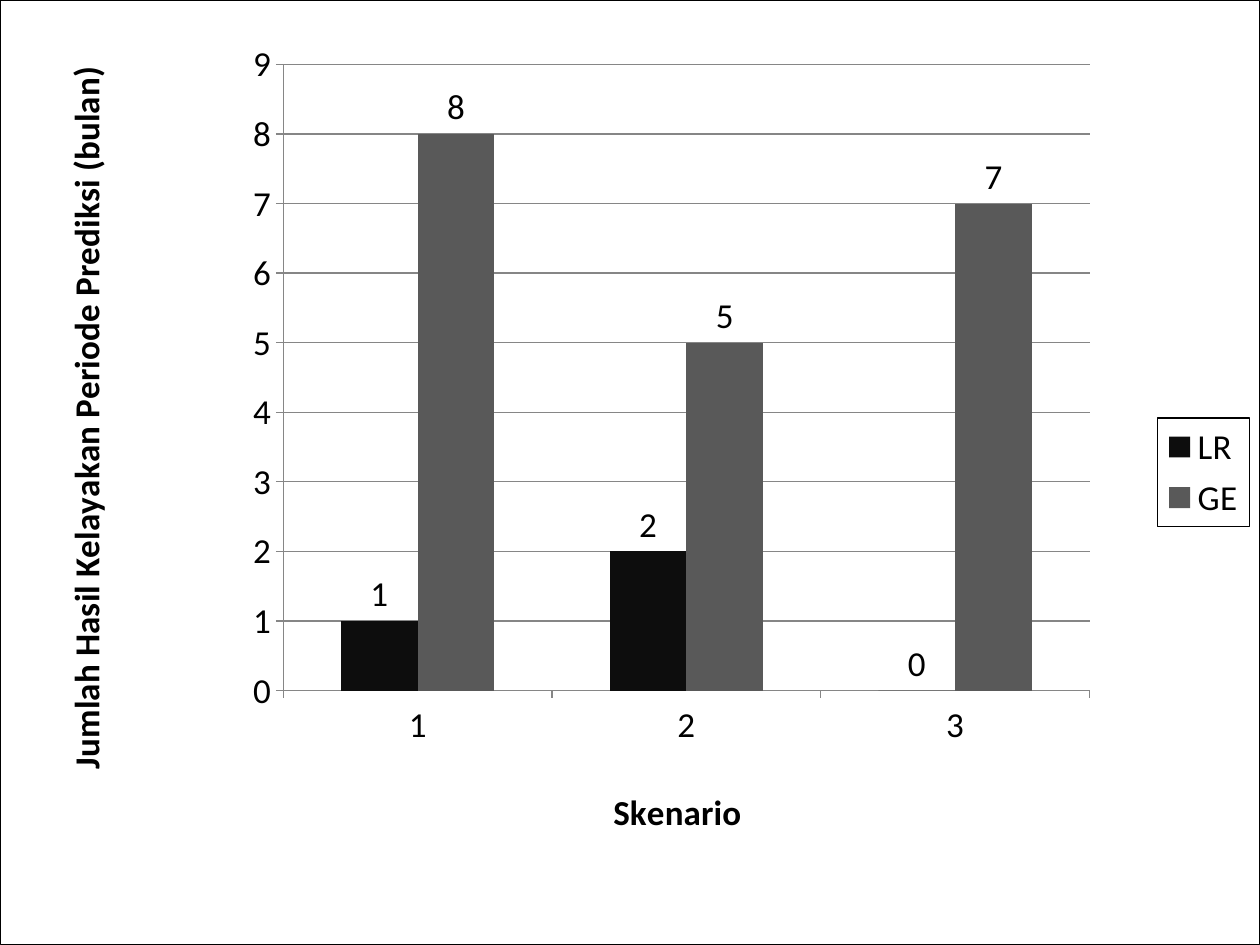
"""Build a slide with a clustered column chart of feasible prediction periods."""
import lxml.etree
import pptx
import pptx.chart.data
import pptx.dml.color
import pptx.enum.chart
import pptx.oxml
import pptx.oxml.ns
import pptx.util

CATEGORIES = ["1", "2", "3"]
SERIES = [("LR", (1, 2, 0), "0D0D0D"), ("GE", (8, 5, 7), "595959")]
AXIS_TITLES = {
    "category": "Skenario",
    "value": "Jumlah Hasil Kelayakan Periode Prediksi (bulan)",
}
THEME = {"font": "Calibri", "size": 20, "text": "000000", "border": "000000",
         "axis": "868686", "background": "FFFFFF"}
SLIDE_WIDTH, SLIDE_HEIGHT = 1260, 945
EMU_PER_PX = pptx.util.Inches(1) // 126
PLOT_BOX = (283, 64, 807, 627)
LEGEND_BOX = (1158, 418, 92, 109)
TITLE_POSITIONS = {"category": (607, 781), "value": (54, 60)}


def color(name):
    return pptx.dml.color.RGBColor.from_string(THEME[name])


def place(element, index, box, inner=False):
    for layout in element.findall(pptx.oxml.ns.qn("c:layout")):
        element.remove(layout)
    scales = (SLIDE_WIDTH, SLIDE_HEIGHT) * 2
    target = '<c:layoutTarget val="inner"/>' if inner else ""
    modes = '<c:xMode val="edge"/><c:yMode val="edge"/>'
    sizes = "".join(f'<c:{key} val="{length / scale:.4f}"/>'
                    for key, length, scale in zip("xywh", box, scales))
    element.insert(index, pptx.oxml.parse_xml(
        f'<c:layout {pptx.oxml.ns.nsdecls("c")}><c:manualLayout>'
        f'{target}{modes}{sizes}</c:manualLayout></c:layout>'))


def frame():
    return pptx.oxml.parse_xml(
        f'<c:spPr {pptx.oxml.ns.nsdecls("c", "a")}>'
        f'<a:solidFill><a:srgbClr val="{THEME["background"]}"/></a:solidFill>'
        f'<a:ln w="{pptx.util.Pt(0.75)}"><a:solidFill>'
        f'<a:srgbClr val="{THEME["border"]}"/></a:solidFill></a:ln></c:spPr>')


def style_font(font, bold=False):
    font.name = THEME["font"]
    font.size = pptx.util.Pt(THEME["size"])
    font.bold = bold
    font.color.rgb = color("text")


def style_line(line):
    line.color.rgb = color("axis")
    line.width = pptx.util.Pt(0.75)


def style_axis(axis, name):
    axis.major_tick_mark = pptx.enum.chart.XL_TICK_MARK.OUTSIDE
    axis.minor_tick_mark = pptx.enum.chart.XL_TICK_MARK.NONE
    style_line(axis.format.line)
    style_font(axis.tick_labels.font)
    text_frame = axis.axis_title.text_frame
    text_frame.text = AXIS_TITLES[name]
    style_font(text_frame.paragraphs[0].font, bold=True)
    style_font(text_frame.paragraphs[0].runs[0].font, bold=True)
    title = axis.axis_title.element
    place(title, 1, TITLE_POSITIONS[name])
    body = title.find(".//" + pptx.oxml.ns.qn("a:bodyPr"))
    body.set("rot", "-5400000" if name == "value" else "0")
    body.set("vert", "horz")


def add_column_chart(slide):
    data = pptx.chart.data.CategoryChartData()
    data.categories = CATEGORIES
    for name, values, _ in SERIES:
        data.add_series(name, values)
    chart = slide.shapes.add_chart(
        pptx.enum.chart.XL_CHART_TYPE.COLUMN_CLUSTERED, 0, 0,
        SLIDE_WIDTH * EMU_PER_PX, SLIDE_HEIGHT * EMU_PER_PX, data).chart
    style_font(chart.font)
    chart.has_title = False
    plot = chart.plots[0]
    plot.gap_width = 150
    plot.overlap = 0
    plot.vary_by_categories = False
    for series, (_, _, fill) in zip(plot.series, SERIES):
        series.format.fill.solid()
        series.format.fill.fore_color.rgb = pptx.dml.color.RGBColor.from_string(fill)
        labels = series.data_labels
        labels.show_value = True
        labels.position = pptx.enum.chart.XL_LABEL_POSITION.OUTSIDE_END
        style_font(labels.font)
    style_axis(chart.category_axis, "category")
    style_axis(chart.value_axis, "value")
    chart.value_axis.minimum_scale = 0
    chart.value_axis.maximum_scale = 9
    chart.value_axis.major_unit = 1
    chart.value_axis.has_major_gridlines = True
    style_line(chart.value_axis.major_gridlines.format.line)
    chart.has_legend = True
    chart.legend.position = pptx.enum.chart.XL_LEGEND_POSITION.RIGHT
    chart.legend.include_in_layout = False
    style_font(chart.legend.font)
    legend = chart.element.find(".//" + pptx.oxml.ns.qn("c:legend"))
    place(legend, 1, LEGEND_BOX)
    legend.find(pptx.oxml.ns.qn("c:overlay")).addnext(frame())
    place(chart.element.find(".//" + pptx.oxml.ns.qn("c:plotArea")), 0, PLOT_BOX, inner=True)
    chart.element.find(pptx.oxml.ns.qn("c:chart")).addnext(frame())


def main():
    presentation = pptx.Presentation()
    presentation.slide_width = SLIDE_WIDTH * EMU_PER_PX
    presentation.slide_height = SLIDE_HEIGHT * EMU_PER_PX
    slide = presentation.slides.add_slide(presentation.slide_layouts[6])
    add_column_chart(slide)
    presentation.save("out.pptx")


if __name__ == "__main__":
    main()
